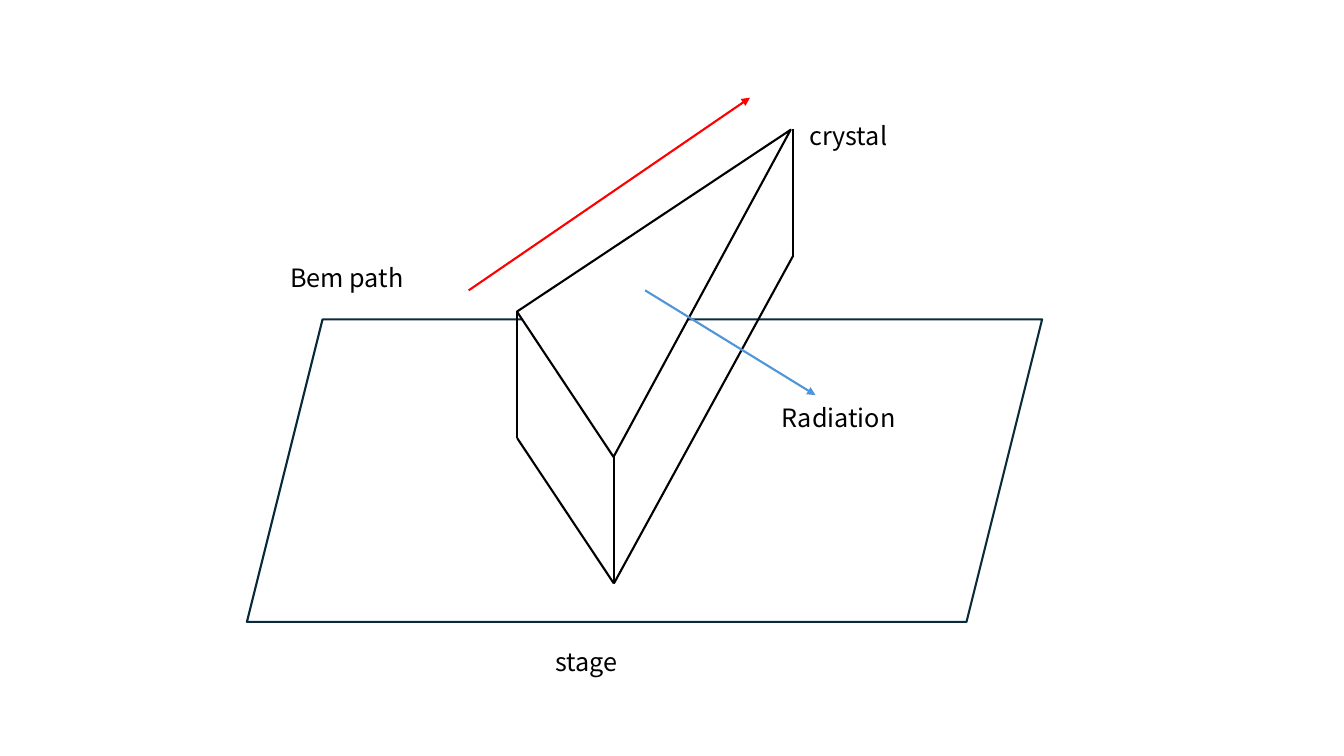
from pptx import Presentation, util as u
from pptx.dml.color import RGBColor
from pptx.enum import shapes, text
from pptx.oxml.ns import qn
from lxml import etree

# Content, lengths in points
SLIDE = (960, 540)
FONT = "Noto Sans CJK KR"
BLACK, WHITE = "000000", "FFFFFF"
LINE_WIDTH = 1.5

STAGE = (176.4, 228.2, 568, 216)
CRYSTAL_TOP = (439.2, 92.2, 124.6, 234.7)
CRYSTAL_TURN = 56.4
CRYSTAL_CORNERS = {"left": (369.4, 222.5), "front": (438.5, 326.4), "right": (566.6, 92.2)}
CRYSTAL_DEPTH = 90.4

ARROWS = [  # start, end, colour
    ((334.8, 207.4), (535.7, 69.8), "FF0000"),
    ((460.8, 207.4), (582.5, 282.2), "4E95D9"),
]
LABELS = [  # text, left, top
    ("Bem path", 200.2, 183.6),
    ("stage", 389.5, 457.9),
    ("crystal", 571, 82.1),
    ("Radiation", 551.5, 283.7),
]
LABEL_SIZE = (97.9, 29.1)


def pts(values):
    return [u.Pt(v) for v in values]


def color(value):
    return RGBColor.from_string(value)


def add_outline(parent, kind, box, line, turn=0):
    sp = parent.add_shape(kind, *pts(box))
    sp.shadow.inherit = False
    sp.rotation = turn
    sp.fill.solid()
    sp.fill.fore_color.rgb = color(WHITE)
    sp.line.color.rgb = color(line)
    sp.line.width = u.Pt(LINE_WIDTH)


def add_line(parent, start, end, line=BLACK, arrow=False):
    cn = parent.add_connector(shapes.MSO_CONNECTOR.STRAIGHT, *pts(start + end))
    cn.line.color.rgb = color(line)
    cn.line.width = u.Pt(LINE_WIDTH)
    sp_pr = cn._element.spPr
    if arrow:
        etree.SubElement(sp_pr.find(qn("a:ln")), qn("a:tailEnd"), type="triangle")
    etree.SubElement(sp_pr, qn("a:effectLst"))


def add_text(parent, words, box, size=18, font=FONT, fill=BLACK):
    tf = parent.add_textbox(*pts(box)).text_frame
    tf.word_wrap = True
    tf.auto_size = text.MSO_AUTO_SIZE.SHAPE_TO_FIT_TEXT
    r = tf.paragraphs[0].add_run()
    r.text = words
    r.font.size = u.Pt(size)
    r.font.name = font
    r.font.color.rgb = color(fill)


def main():
    prs = Presentation()
    prs.slide_width, prs.slide_height = pts(SLIDE)
    s = prs.slides.add_slide(prs.slide_layouts[6])

    # Stage
    add_outline(s.shapes, shapes.MSO_SHAPE.PARALLELOGRAM, STAGE, "092A39")

    # Crystal: top face, upright edges, then the visible lower edges
    crystal = s.shapes.add_group_shape().shapes
    add_outline(crystal, shapes.MSO_SHAPE.RIGHT_TRIANGLE, CRYSTAL_TOP, BLACK, CRYSTAL_TURN)
    base = {name: (x, y + CRYSTAL_DEPTH) for name, (x, y) in CRYSTAL_CORNERS.items()}
    for name, corner in CRYSTAL_CORNERS.items():
        add_line(crystal, corner, base[name])
    for side in ("left", "right"):
        add_line(crystal, base[side], base["front"])

    # Beam and radiation arrows
    for start, end, line in ARROWS:
        add_line(s.shapes, start, end, line, arrow=True)

    # Labels
    for words, left, top in LABELS:
        add_text(s.shapes, words, (left, top) + LABEL_SIZE)

    prs.save("out.pptx")


if __name__ == "__main__":
    main()
